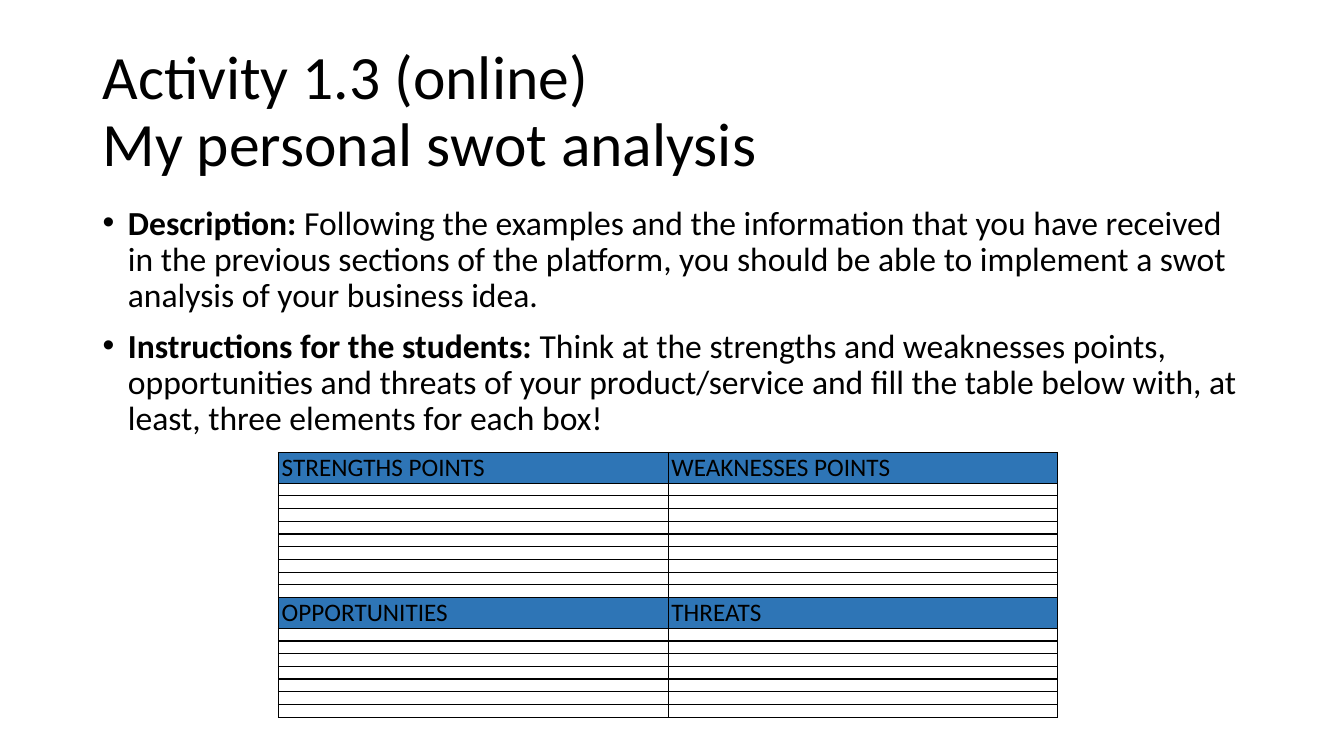
from dataclasses import dataclass

from lxml import etree
from pptx import Presentation
from pptx import util as u
from pptx.dml.color import RGBColor
from pptx.enum import text
from pptx.oxml import ns


@dataclass(frozen=True)
class Theme:
    font: str = "Calibri"
    ink: str = "000000"
    heading_fill: str = "2E75B6"
    title_size: float = 44
    body_size: float = 24
    heading_size: float = 11
    blank_size: float = 5
    border: float = 1


@dataclass(frozen=True)
class Box:
    left: float
    top: float
    width: float
    height: float


@dataclass(frozen=True)
class Point:
    label: str
    detail: str


@dataclass(frozen=True)
class Section:
    headings: tuple[str, str]
    blank_rows: int


THEME = Theme()
TITLE_BOX = Box(2.33, 1.01, 29.21, 3.68)
BODY_BOX = Box(2.33, 5.07, 29.21, 12.09)
SWOT_BOX = Box(7.02, 11.4, 19.64, 6.32)
HEADING_HEIGHT = 0.6
BLANK_HEIGHT = 0.32

TITLE = "Activity 1.3 (online)\vMy personal swot analysis"
POINTS = (
    Point(
        "Description: ",
        "Following the examples and the information that you have received in the "
        "previous sections of the platform, you should be able to implement a swot "
        "analysis of your business idea.",
    ),
    Point(
        "Instructions for the students: ",
        "Think at the strengths and weaknesses points, opportunities and threats of "
        "your product/service and fill the table below with, at least, three "
        "elements for each box!",
    ),
)
SECTIONS = (
    Section(("STRENGTHS POINTS ", "WEAKNESSES POINTS"), 9),
    Section(("OPPORTUNITIES ", "THREATS"), 7),
)


def place(placeholder, box: Box) -> None:
    placeholder.left, placeholder.top = u.Cm(box.left), u.Cm(box.top)
    placeholder.width, placeholder.height = u.Cm(box.width), u.Cm(box.height)


def style(paragraph, size: float, spacing: float, align) -> None:
    paragraph.font.name = THEME.font
    paragraph.font.size = u.Pt(size)
    paragraph.font.color.rgb = RGBColor.from_string(THEME.ink)
    paragraph.line_spacing = spacing
    paragraph.alignment = align


def fill_title(title) -> None:
    place(title, TITLE_BOX)
    frame = title.text_frame
    frame.text = TITLE
    frame.vertical_anchor = text.MSO_ANCHOR.MIDDLE
    frame.auto_size = text.MSO_AUTO_SIZE.NONE
    style(frame.paragraphs[0], THEME.title_size, 0.9, text.PP_ALIGN.LEFT)


def fill_body(body) -> None:
    place(body, BODY_BOX)
    frame = body.text_frame
    frame.auto_size = text.MSO_AUTO_SIZE.NONE
    for index, point in enumerate(POINTS):
        paragraph = frame.add_paragraph() if index else frame.paragraphs[0]
        label = paragraph.add_run()
        label.text = point.label
        label.font.bold = True
        paragraph.add_run().text = point.detail
        style(paragraph, THEME.body_size, 0.9, text.PP_ALIGN.LEFT)
        paragraph.space_before = u.Pt(10)
        properties = paragraph._p.get_or_add_pPr()
        properties.set("marL", str(u.Cm(0.64)))
        properties.set("indent", str(-u.Cm(0.64)))


def add_borders(cell) -> None:
    properties = cell._tc.get_or_add_tcPr()
    for position, side in enumerate(("lnL", "lnR", "lnT", "lnB")):
        line = etree.Element(ns.qn(f"a:{side}"), w=str(u.Pt(THEME.border)))
        solid = etree.SubElement(line, ns.qn("a:solidFill"))
        etree.SubElement(solid, ns.qn("a:srgbClr"), val=THEME.ink)
        properties.insert(position, line)


def fill_cell(cell, heading: str) -> None:
    cell.margin_left = cell.margin_right = u.Cm(0.08)
    cell.margin_top = cell.margin_bottom = 0
    paragraph = cell.text_frame.paragraphs[0]
    if heading:
        cell.text = heading
        cell.vertical_anchor = text.MSO_ANCHOR.BOTTOM
        style(paragraph, THEME.heading_size, 1.15, text.PP_ALIGN.CENTER)
        paragraph.font.bold = True
        cell.fill.solid()
        cell.fill.fore_color.rgb = RGBColor.from_string(THEME.heading_fill)
    else:
        size = str(int(THEME.blank_size * 100))
        etree.SubElement(paragraph._p, ns.qn("a:endParaRPr"), sz=size)
        cell.fill.background()
    add_borders(cell)


def add_swot(slide) -> None:
    rows = [
        row
        for section in SECTIONS
        for row in (section.headings, *[("", "")] * section.blank_rows)
    ]
    box = SWOT_BOX
    swot = slide.shapes.add_table(
        len(rows), 2, u.Cm(box.left), u.Cm(box.top), u.Cm(box.width), u.Cm(box.height)
    ).table
    swot.first_row = swot.horz_banding = False
    for row, headings in zip(swot.rows, rows):
        row.height = u.Cm(HEADING_HEIGHT if headings[0] else BLANK_HEIGHT)
        for cell, heading in zip(row.cells, headings):
            fill_cell(cell, heading)


def main() -> None:
    deck = Presentation()
    deck.slide_width, deck.slide_height = u.Cm(33.87), u.Cm(19.05)
    slide = deck.slides.add_slide(deck.slide_layouts[1])
    fill_title(slide.shapes.title)
    fill_body(slide.placeholders[1])
    add_swot(slide)
    deck.save("out.pptx")


if __name__ == "__main__":
    main()
